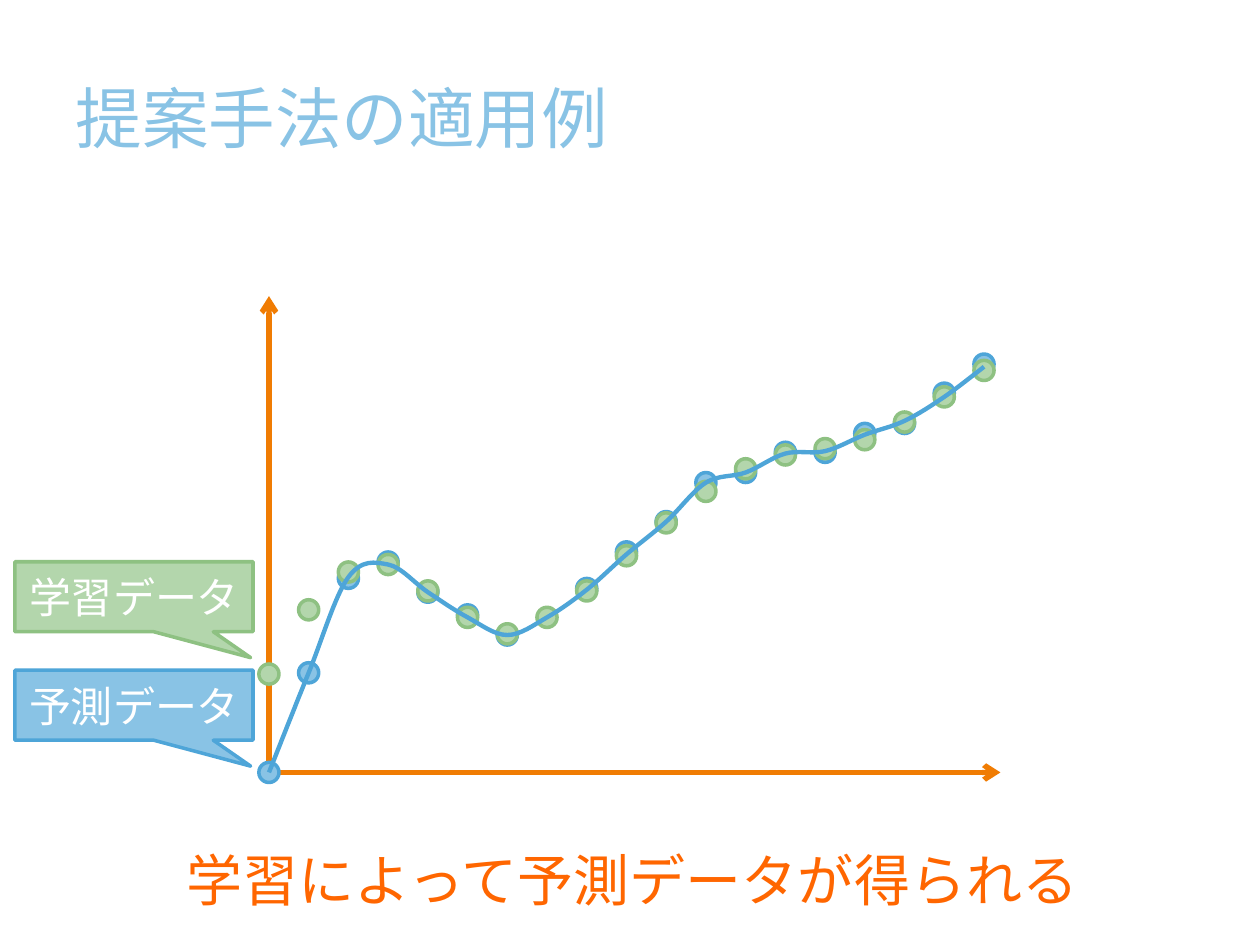
from lxml import etree
from pptx import Presentation
from pptx.dml.color import RGBColor
from pptx.enum import shapes, text
from pptx.oxml.ns import qn
from pptx.util import Pt

FONT = "Noto Sans CJK JP"
BLUE, BLUE_EDGE = "89C3E5", "4EA5D8"
GREEN, GREEN_EDGE = "B3D6AC", "8EC182"
ORANGE, CAPTION = "F07C03", "FF6600"

STEP, DOT = 22.7, 11.5
# Heights above the horizontal axis, one per step
PREDICTED = [0, 56.9, 110.9, 120.2, 103, 90, 78.5, None, 105.1, 126, 143.3,
             165.6, 171.4, 182.9, 182.9, 193.7, 199.4, 216.7, 233.3]
TRAINING = [56.2, 92.9, 114.5, 118.8, 103.7, 88.6, 79.2, 88.6, 103.7, 123.8,
            142.6, 160.6, 173.5, 181.4, 185, 190.1, 200.2, 214.6, 229.7]
CURVE = [0, 56.9, 111.6, 118.8, 103, 88.6, 78.5, 88.6, 104.4, 124.6, 143.3,
         165.6, 171.4, 182.2, 183.6, 193, 200.9, 214.6, 231.8]


def color(value):
    return RGBColor.from_string(value)


def set_line(shape, value, width):
    shape.line.color.rgb = color(value)
    shape.line.width = Pt(width)


def style_shape(shape, fill, edge):
    shape.shadow.inherit = False
    shape.fill.solid()
    shape.fill.fore_color.rgb = color(fill)
    set_line(shape, edge, 2)


def write(frame, words, size, value, align):
    frame.word_wrap = True
    frame.auto_size = text.MSO_AUTO_SIZE.NONE
    paragraph = frame.paragraphs[0]
    paragraph.alignment = align
    run = paragraph.add_run()
    run.text = words
    run.font.size = Pt(size)
    run.font.color.rgb = color(value)
    run.font.name = FONT
    properties = run.font._element
    properties.find(qn("a:latin")).addnext(
        etree.Element(qn("a:ea"), typeface=FONT))
    return properties


def add_title(slide, left, top, width, height):
    title = slide.shapes.title
    title.left, title.top = Pt(left), Pt(top)
    title.width, title.height = Pt(width), Pt(height)
    title.text_frame.vertical_anchor = text.MSO_ANCHOR.MIDDLE
    properties = write(title.text_frame, "提案手法の適用例", 38, BLUE,
                       text.PP_ALIGN.LEFT)
    # Soft shadow behind the letters
    effects = etree.Element(qn("a:effectLst"))
    shadow = etree.SubElement(effects, qn("a:outerShdw"), blurRad="38100",
                              dist="38100", dir="2700000", algn="tl")
    shade = etree.SubElement(shadow, qn("a:srgbClr"), val="000000")
    etree.SubElement(shade, qn("a:alpha"), val="43000")
    properties.find(qn("a:latin")).addprevious(effects)


def add_axis(slide, start, end):
    axis = slide.shapes.add_connector(shapes.MSO_CONNECTOR.STRAIGHT,
                                      *map(Pt, start + end))
    set_line(axis, ORANGE, 3)
    etree.SubElement(axis.line._get_or_add_ln(), qn("a:tailEnd"), type="arrow")
    etree.SubElement(axis._element.spPr, qn("a:effectLst"))


def add_dots(slide, left, bottom, heights, fill, edge):
    for index, height in enumerate(heights):
        if height is None:
            continue
        dot = slide.shapes.add_shape(
            shapes.MSO_SHAPE.OVAL, Pt(left + index * STEP - DOT / 2),
            Pt(bottom - height - DOT / 2), Pt(DOT), Pt(DOT))
        style_shape(dot, fill, edge)


def add_curve(slide, left, bottom, heights):
    knots = [(Pt(left + index * STEP), Pt(bottom - height))
             for index, height in enumerate(heights)]
    builder = slide.shapes.build_freeform(*knots[0])
    builder.add_line_segments(knots[1:], close=False)
    curve = builder.convert_to_shape()
    curve.shadow.inherit = False
    curve.fill.background()
    set_line(curve, BLUE_EDGE, 2.5)

    # Turn each straight segment into a smooth one through the same knots
    def handle(index, sign):
        before = knots[max(index - 1, 0)]
        after = knots[min(index + 1, len(knots) - 1)]
        return [k + sign * (b - a) / 6
                for k, a, b in zip(knots[index], before, after)]

    segments = list(curve._element.iter(qn("a:lnTo")))
    for index, segment in enumerate(segments):
        segment.tag = qn("a:cubicBezTo")
        cubic = etree.Element(qn("a:cubicBezTo"))
        for x, y in (handle(index, 1), handle(index + 1, -1), knots[index + 1]):
            etree.SubElement(cubic, qn("a:pt"), x=str(round(x - curve.left)),
                             y=str(round(y - curve.top)))
        segment.getparent().replace(segment, cubic)


def add_plot(slide, left, top, width, height):
    bottom = top + height
    add_axis(slide, (left, bottom), (left + width, bottom))
    add_axis(slide, (left, bottom), (left, top))
    add_dots(slide, left, bottom, PREDICTED, BLUE, BLUE_EDGE)
    add_dots(slide, left, bottom, TRAINING, GREEN, GREEN_EDGE)
    add_curve(slide, left, bottom, CURVE)


def add_callout(slide, left, top, width, height, words, fill, edge):
    callout = slide.shapes.add_shape(
        shapes.MSO_SHAPE.RECTANGULAR_CALLOUT,
        Pt(left), Pt(top), Pt(width), Pt(height))
    callout.adjustments[0], callout.adjustments[1] = 0.49, 0.87
    style_shape(callout, fill, edge)
    callout.text_frame.vertical_anchor = text.MSO_ANCHOR.MIDDLE
    write(callout.text_frame, words, 24, "FFFFFF", text.PP_ALIGN.CENTER)


def add_caption(slide, left, top, width, height):
    box = slide.shapes.add_textbox(Pt(left), Pt(top), Pt(width), Pt(height))
    write(box.text_frame, "学習によって予測データが得られる", 32, CAPTION,
          text.PP_ALIGN.CENTER)


def main():
    presentation = Presentation()
    presentation.slide_width, presentation.slide_height = Pt(720), Pt(540)
    slide = presentation.slides.add_slide(presentation.slide_layouts[5])
    add_title(slide, 36, 21.6, 648, 90)
    add_plot(slide, 153.7, 169.2, 418, 272.2)
    # Series labels
    add_callout(slide, 8.6, 383, 136, 40, "予測データ", BLUE, BLUE_EDGE)
    add_callout(slide, 8.6, 321, 136, 40, "学習データ", GREEN, GREEN_EDGE)
    add_caption(slide, 93.6, 479.5, 535.7, 46.8)
    presentation.save("out.pptx")


if __name__ == "__main__":
    main()
